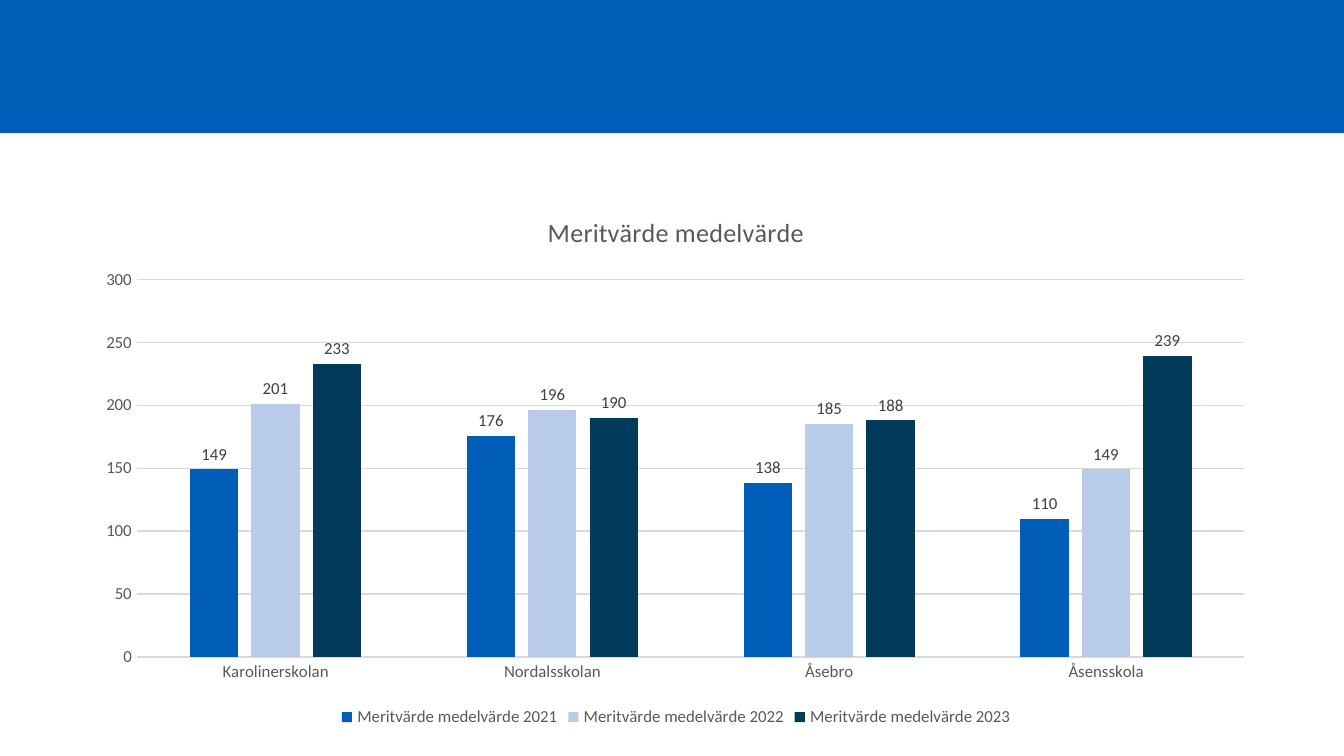
from pptx import Presentation
from pptx.chart.data import CategoryChartData as ChartData
from pptx.dml.color import RGBColor as Color
from pptx.enum.chart import (
    XL_CHART_TYPE as Kind,
    XL_LABEL_POSITION as Spot,
    XL_LEGEND_POSITION as Side,
    XL_TICK_MARK as Tick,
)
from pptx.enum.shapes import MSO_SHAPE as Shape
from pptx.oxml import parse_xml
from pptx.oxml.ns import nsdecls, qn
from pptx.util import Inches, Pt

TITLE = "Meritvärde medelvärde"
SCHOOLS = ["Karolinerskolan", "Nordalsskolan", "Åsebro", "Åsensskola"]
YEARS = [
    (2021, [149, 176, 138, 110], "005EB8"),
    (2022, [201, 196, 185, 149], "B8CCEA"),
    (2023, [233, 190, 188, 239], "003B5C"),
]
BLUE, GREY, DARK, RULE = "005EB8", "595959", "404040", "D9D9D9"
LEFT, TOP, WIDE, HIGH = 0.62, 1.43, 8.82, 4.02
TITLE_AT = {"x": 3.42, "y": 0.13}
PLOT_AT = {"x": 0.4, "y": 0.65, "w": 8.24, "h": 2.81}


def paint(fill, tone):
    fill.solid()
    fill.fore_color.rgb = Color.from_string(tone)


def style(font, size=9, tone=GREY, face="Calibri"):
    font.size, font.name, font.bold = Pt(size), face, False
    font.color.rgb = Color.from_string(tone)


def write(frame, text, **form):
    frame.text = text
    style(frame.paragraphs[0].runs[0].font, **form)


def rule(line):
    line.color.rgb = Color.from_string(RULE)
    line.width = Pt(0.75)


def layout(spots, inner=False):
    target = '<c:layoutTarget val="inner"/>' if inner else ""
    modes = "".join(f'<c:{k}Mode val="edge"/>' for k in "xy")
    sizes = "".join(
        f'<c:{k} val="{v / (WIDE if k in "xw" else HIGH)}"/>'
        for k, v in spots.items()
    )
    return parse_xml(
        f'<c:layout {nsdecls("c")}><c:manualLayout>{target}{modes}{sizes}'
        "</c:manualLayout></c:layout>"
    )


def place(parent, index, item):
    for old in parent.findall(qn("c:layout")):
        parent.remove(old)
    parent.insert(index, item)


def add_band(slide, width):
    band = slide.shapes.add_shape(Shape.RECTANGLE, 0, 0, width, Inches(0.99))
    band.shadow.inherit = False
    paint(band.fill, BLUE)
    band.line.fill.background()


def add_bars(slide):
    data = ChartData(number_format="0")
    data.categories = SCHOOLS
    for year, marks, _ in YEARS:
        data.add_series(f"{TITLE} {year}", marks)
    box = [Inches(n) for n in (LEFT, TOP, WIDE, HIGH)]
    chart = slide.shapes.add_chart(Kind.COLUMN_CLUSTERED, *box, data).chart
    style(chart.font, size=10, tone="000000")

    chart.has_title = True
    write(chart.chart_title.text_frame, TITLE, size=14)
    place(chart.chart_title._element, 1, layout(TITLE_AT))

    chart.has_legend = True
    chart.legend.position = Side.BOTTOM
    chart.legend.include_in_layout = False
    style(chart.legend.font)

    cats, vals = chart.category_axis, chart.value_axis
    for axis in (cats, vals):
        axis.major_tick_mark = axis.minor_tick_mark = Tick.NONE
        style(axis.tick_labels.font)
    rule(cats.format.line)
    vals.format.line.fill.background()
    vals.has_major_gridlines = True
    rule(vals.major_gridlines.format.line)
    vals.minimum_scale, vals.maximum_scale, vals.major_unit = 0, 300, 50

    plot = chart.plots[0]
    plot.gap_width, plot.overlap, plot.vary_by_categories = 219, -27, False
    place(plot._element.getparent(), 0, layout(PLOT_AT, inner=True))
    for bars, (_, _, tone) in zip(plot.series, YEARS):
        paint(bars.format.fill, tone)
        bars.invert_if_negative = False
        tags = bars.data_labels
        tags.show_value, tags.position = True, Spot.OUTSIDE_END
        tags.number_format, tags.number_format_is_linked = "0", False
        style(tags.font, tone=DARK)


def main():
    """Build the slide of mean merit values by school."""
    deck = Presentation()
    deck.slide_width = Inches(10)
    deck.slide_height = deck.slide_width * 9 // 16
    slide = deck.slides.add_slide(deck.slide_layouts[6])
    add_band(slide, deck.slide_width)
    add_bars(slide)
    deck.save("out.pptx")


if __name__ == "__main__":
    main()
